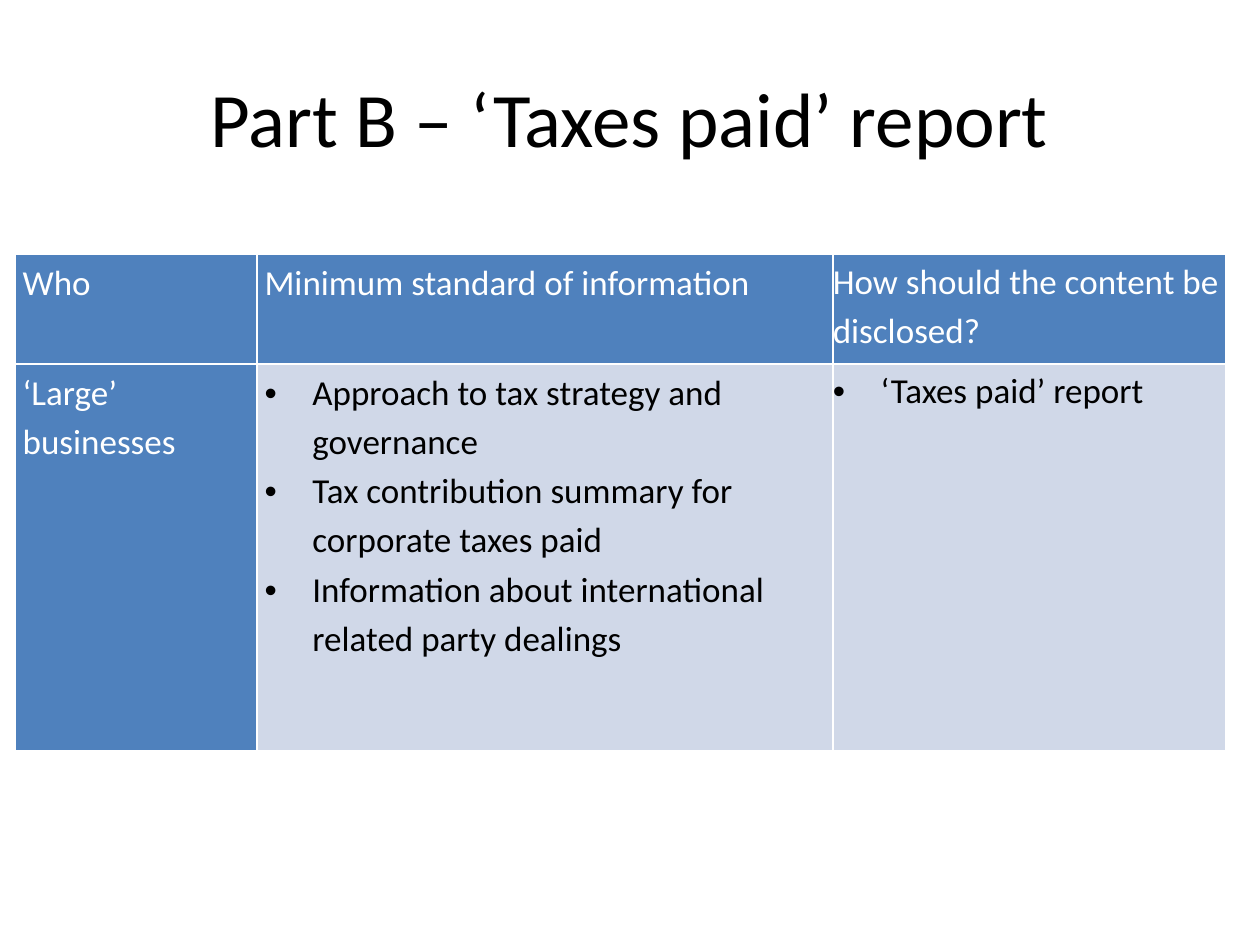
from dataclasses import dataclass

from lxml import etree
from pptx import Presentation
from pptx.dml.color import RGBColor
from pptx.enum.text import MSO_ANCHOR, PP_ALIGN
from pptx.oxml.ns import qn
from pptx.util import Inches, Pt

CENTER = PP_ALIGN.CENTER
MIDDLE = MSO_ANCHOR.MIDDLE
TOP = MSO_ANCHOR.TOP


@dataclass(frozen=True)
class Theme:
    font: str = "Calibri"
    title_size: int = 44
    body_size: int = 20
    line_spacing: float = 1.15
    dark: str = "000000"
    light: str = "FFFFFF"
    heading_fill: str = "4F81BD"
    content_fill: str = "D0D8E8"
    border_width: int = 1


THEME = Theme()
TITLE = "Part B – ‘Taxes paid’ report"
COLUMN_WIDTHS = (1.92, 4.57, 3.12)
ROW_HEIGHTS = (0.87, 3.07)
CELL_INSETS = ((0.06, 0.01), (0.06, 0.01), (0, 0))
BULLET_INDENT = 0.38
REPORT_ROWS = (
    (
        ("Who",),
        ("Minimum standard of information",),
        ("How should the content be disclosed?",),
    ),
    (
        ("‘Large’ businesses",),
        (
            "Approach to tax strategy and governance",
            "Tax contribution summary for corporate taxes paid",
            "Information about international related party dealings",
        ),
        ("‘Taxes paid’ report",),
    ),
)


def add_run(paragraph, text, size, color):
    run = paragraph.add_run()
    run.text = text
    run.font.name = THEME.font
    run.font.size = Pt(size)
    run.font.bold = False
    run.font.color.rgb = RGBColor.from_string(color)


def add_bullet(paragraph):
    properties = paragraph._p.get_or_add_pPr()
    properties.set("marL", str(Inches(BULLET_INDENT)))
    properties.set("indent", str(-Inches(BULLET_INDENT)))
    bullet_font = etree.SubElement(properties, qn("a:buFont"))
    bullet_font.set("typeface", "Arial")
    etree.SubElement(properties, qn("a:buChar")).set("char", "•")


def add_borders(cell):
    properties = cell._tc.get_or_add_tcPr()
    for side in ("lnL", "lnR", "lnT", "lnB"):
        border = etree.SubElement(properties, qn(f"a:{side}"))
        border.set("w", str(Pt(THEME.border_width)))
        border_fill = etree.SubElement(border, qn("a:solidFill"))
        etree.SubElement(border_fill, qn("a:srgbClr")).set("val", THEME.light)


def fill_cell(cell, lines, insets, is_heading):
    side_inset, top_inset = insets
    cell.margin_left = cell.margin_right = Inches(side_inset)
    cell.margin_top = Inches(top_inset)
    cell.margin_bottom = Inches(0)
    cell.vertical_anchor = TOP
    add_borders(cell)
    cell.fill.solid()
    background = THEME.heading_fill if is_heading else THEME.content_fill
    cell.fill.fore_color.rgb = RGBColor.from_string(background)
    text_color = THEME.light if is_heading else THEME.dark
    for index, line in enumerate(lines):
        paragraph = cell.text_frame.paragraphs[0] if index == 0 else cell.text_frame.add_paragraph()
        paragraph.line_spacing = THEME.line_spacing
        if not is_heading:
            add_bullet(paragraph)
        add_run(paragraph, line, THEME.body_size, text_color)


def add_title(slide, left, top, width, height):
    title = slide.shapes.add_textbox(left, top, width, height)
    title.text_frame.word_wrap = True
    title.text_frame.vertical_anchor = MIDDLE
    heading = title.text_frame.paragraphs[0]
    heading.alignment = CENTER
    add_run(heading, TITLE, THEME.title_size, THEME.dark)


def add_report_table(slide, left, top, width, height):
    report = slide.shapes.add_table(
        len(ROW_HEIGHTS), len(COLUMN_WIDTHS), left, top, width, height
    ).table
    report.first_row = False
    report.horz_banding = False
    for column, share in zip(report.columns, COLUMN_WIDTHS):
        column.width = int(width * share / sum(COLUMN_WIDTHS))
    for row, share in zip(report.rows, ROW_HEIGHTS):
        row.height = int(height * share / sum(ROW_HEIGHTS))
    for row_index, entries in enumerate(REPORT_ROWS):
        for column_index, (lines, insets) in enumerate(zip(entries, CELL_INSETS)):
            is_heading = row_index == 0 or column_index == 0
            fill_cell(report.cell(row_index, column_index), lines, insets, is_heading)


def main():
    presentation = Presentation()
    presentation.slide_width = Inches(10)
    presentation.slide_height = Inches(7.5)
    slide = presentation.slides.add_slide(presentation.slide_layouts[6])
    add_title(slide, Inches(0.5), Inches(0.3), Inches(9), Inches(1.25))
    add_report_table(slide, Inches(0.12), Inches(2.02), Inches(9.61), Inches(3.94))
    presentation.save("out.pptx")


if __name__ == "__main__":
    main()
